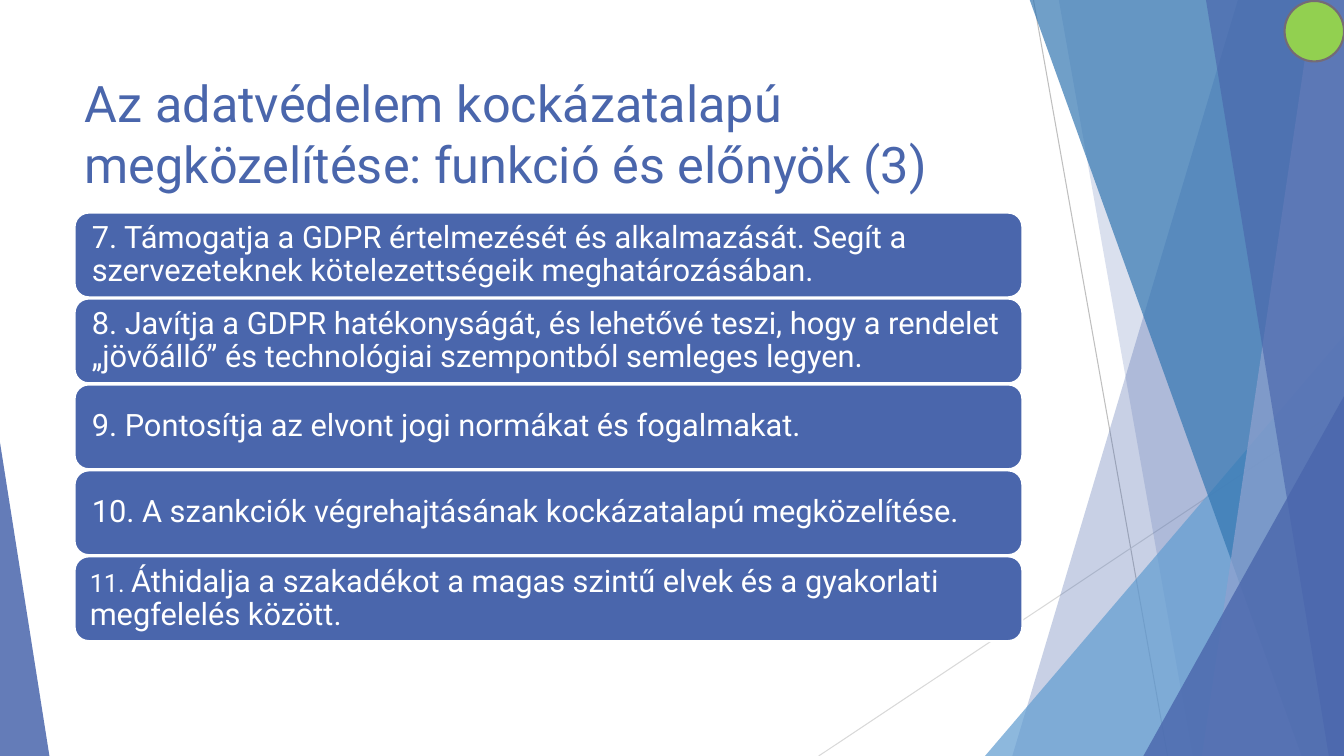
from lxml import etree
from pptx import Presentation
from pptx.dml.color import RGBColor
from pptx.enum import shapes, text
from pptx.oxml import ns
from pptx.util import Inches, Pt

FONT = "Roboto"
BLUE, WHITE = "4A66AC", "FFFFFF"
WIDTH, HEIGHT, TOP = 13.33, 7.5, -0.01

TITLE = "Az adatvédelem kockázatalapú megközelítése: funkció és előnyök (3)"
BENEFITS = [
    ("7. ", "Támogatja a GDPR értelmezését és alkalmazását. Segít a szervezeteknek kötelezettségeik meghatározásában."),
    ("8. ", "Javítja a GDPR hatékonyságát, és lehetővé teszi, hogy a rendelet „jövőálló” és technológiai szempontból semleges legyen."),
    ("9. ", "Pontosítja az elvont jogi normákat és fogalmakat."),
    ("10. ", "A szankciók végrehajtásának kockázatalapú megközelítése."),
    ("11. ", "Áthidalja a szakadékot a magas szintű elvek és a gyakorlati megfelelés között."),
]
RAYS = [
    ((10.25, 0), (11.58, HEIGHT), "BFBFBF"),
    ((WIDTH, 4.03), (8.12, HEIGHT), "D9D9D9"),
]
# Bands: top-left x, bottom-left x. Peaks: left, top, width, apex position.
FACETS = [
    ("band", (12.28, 10.04), BLUE, 30),
    ("band", (10.5, 11.83), BLUE, 20),
    ("peak", (9.77, 3.33, 3.56, 1), "629DD1", 72),
    ("band", (10.21, 12.91), "3477B2", 70),
    ("band", (13.03, 11.92), "90A2CF", 70),
    ("band", (11.96, 13.18), BLUE, 65),
    ("peak", (11.34, 3.93, 1.99, 1), BLUE, 80),
    ("peak", (0, 4.39, 0.49, 0), BLUE, 85),
]
LEFT, COLUMN_WIDTH = 0.74, 9.4
FIRST_TOP, BAR_HEIGHT, BAR_STEP = 2.11, 0.84, 0.8525


def color(value):
    return RGBColor.from_string(value)


def paint(shape, fill, outline=None, opacity=100):
    shape.shadow.inherit = False
    shape.fill.solid()
    shape.fill.fore_color.rgb = color(fill)
    if opacity < 100:
        tint = shape.fill._xPr.find(".//" + ns.qn("a:srgbClr"))
        etree.SubElement(tint, ns.qn("a:alpha"), val=str(opacity * 1000))
    if outline:
        shape.line.color.rgb = color(outline)
        shape.line.width = Pt(1.5)
    else:
        shape.line.fill.background()


def add_preset(slide, preset, *box):
    return slide.shapes.add_shape(preset, *map(Inches, box))


def add_rays(slide):
    for start, end, tone in RAYS:
        ray = slide.shapes.add_connector(
            shapes.MSO_CONNECTOR.STRAIGHT, *map(Inches, start + end))
        ray.line.color.rgb = color(tone)
        ray.line.width = Pt(0.75)
        etree.SubElement(ray._element.spPr, ns.qn("a:effectLst"))


def add_facets(slide):
    for kind, geometry, fill, opacity in FACETS:
        if kind == "band":
            upper, lower = geometry
            outline = slide.shapes.build_freeform(Inches(upper), Inches(TOP))
            corners = [(WIDTH, TOP), (WIDTH, HEIGHT), (lower, HEIGHT)]
            outline.add_line_segments([(Inches(x), Inches(y)) for x, y in corners])
            facet = outline.convert_to_shape()
        else:
            left, top, width, apex = geometry
            facet = add_preset(slide, shapes.MSO_SHAPE.ISOSCELES_TRIANGLE,
                               left, top, width, HEIGHT - top)
            facet.adjustments[0] = apex
        paint(facet, fill, opacity=opacity)


def add_title(slide):
    title = slide.shapes.title
    title.left, title.top = Inches(LEFT), Inches(0.67)
    title.width, title.height = Inches(COLUMN_WIDTH), Inches(1.44)
    frame = title.text_frame
    frame.text = TITLE
    frame.word_wrap = True
    frame.vertical_anchor = text.MSO_ANCHOR.TOP
    heading = frame.paragraphs[0]
    heading.alignment = text.PP_ALIGN.LEFT
    heading.line_spacing = 1.0
    heading.font.name, heading.font.size = FONT, Pt(36)
    heading.font.color.rgb = color(BLUE)


def add_benefits(slide):
    for index, (number, benefit) in enumerate(BENEFITS):
        last = index == len(BENEFITS) - 1
        bar = add_preset(slide, shapes.MSO_SHAPE.ROUNDED_RECTANGLE, LEFT,
                         FIRST_TOP + index * BAR_STEP, COLUMN_WIDTH, BAR_HEIGHT)
        paint(bar, BLUE, WHITE)
        frame = bar.text_frame
        frame.word_wrap = True
        frame.vertical_anchor = text.MSO_ANCHOR.MIDDLE
        frame.margin_left = frame.margin_right = Inches(0.11 if last else 0.13)
        frame.margin_top = frame.margin_bottom = Inches(0.07)
        line = frame.paragraphs[0]
        line.alignment = text.PP_ALIGN.LEFT
        line.line_spacing = 0.9
        line.font.name = FONT
        line.font.color.rgb = color(WHITE)
        if last:
            parts = [(number, 18), (benefit, 22)]
        else:
            parts = [(number + benefit, 22)]
        for words, size in parts:
            run = line.add_run()
            run.text = words
            run.font.size = Pt(size)


def main():
    deck = Presentation()
    deck.slide_width, deck.slide_height = Inches(WIDTH), Inches(HEIGHT)
    slide = deck.slides.add_slide(deck.slide_layouts[5])
    add_rays(slide)
    add_facets(slide)
    add_title(slide)
    add_benefits(slide)
    badge = add_preset(slide, shapes.MSO_SHAPE.OVAL, 12.74, 0.01, 0.59, 0.6)
    paint(badge, "92D050", "746B76")
    deck.save("out.pptx")


if __name__ == "__main__":
    main()
